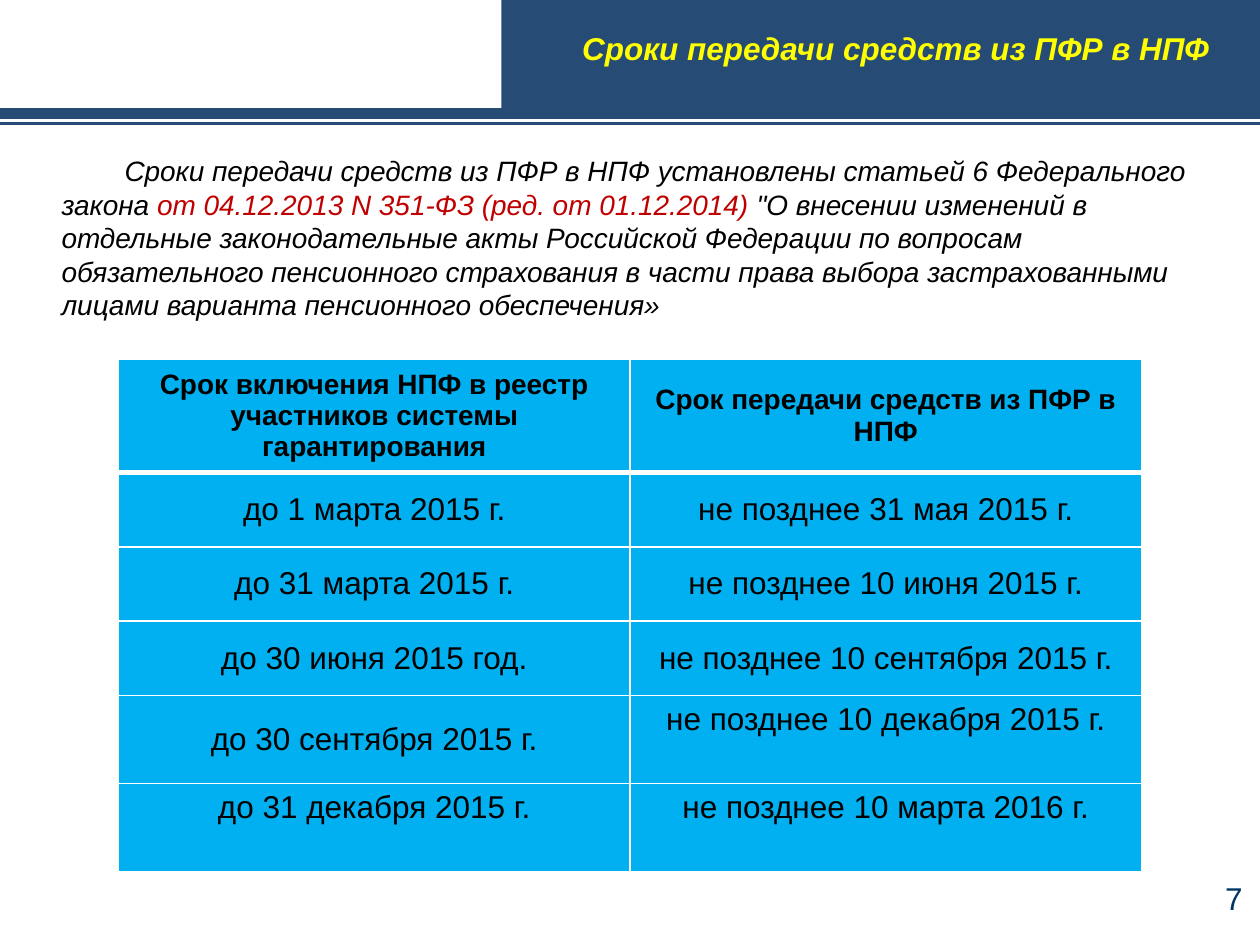
from lxml import etree
from pptx import Presentation
from pptx.dml.color import RGBColor
from pptx.enum.shapes import MSO_CONNECTOR, MSO_SHAPE
from pptx.enum.text import MSO_ANCHOR, PP_ALIGN
from pptx.oxml.ns import qn
from pptx.util import Inches, Pt

LEFT, CENTER, RIGHT = PP_ALIGN.LEFT, PP_ALIGN.CENTER, PP_ALIGN.RIGHT
TOP, MIDDLE = MSO_ANCHOR.TOP, MSO_ANCHOR.MIDDLE
RECT, STRAIGHT = MSO_SHAPE.RECTANGLE, MSO_CONNECTOR.STRAIGHT

NAVY, SKY, WHITE, BLACK = "264B75", "00B0F0", "FFFFFF", "000000"

TITLE = "Сроки передачи средств из ПФР в НПФ"
INTRO = [
    ("Сроки передачи средств из ПФР в НПФ установлены статьей 6 "
     "Федерального закона ", BLACK),
    ("от 04.12.2013 N 351-ФЗ (ред. от 01.12.2014) ", "C00000"),
    ("\"О внесении изменений в отдельные законодательные акты Российской "
     "Федерации по вопросам обязательного пенсионного страхования в части "
     "права выбора застрахованными лицами варианта пенсионного "
     "обеспечения»", BLACK),
]
# Row height, then text and anchor of both cells
TERMS = [
    (0.89, ("Срок включения НПФ в реестр участников системы гарантирования",
            MIDDLE), ("Срок передачи средств из ПФР в НПФ", MIDDLE)),
    (0.59, ("до 1 марта 2015 г.", MIDDLE),
     ("не позднее 31 мая 2015 г.", MIDDLE)),
    (0.59, ("до 31 марта 2015 г.", MIDDLE),
     ("не позднее 10 июня 2015 г.", MIDDLE)),
    (0.59, ("до 30 июня 2015 год.", MIDDLE),
     ("не позднее 10 сентября 2015 г.", MIDDLE)),
    (0.7, ("до 30 сентября 2015 г.", MIDDLE),
     ("не позднее 10 декабря 2015 г.", TOP)),
    (0.7, ("до 31 декабря 2015 г.", TOP),
     ("не позднее 10 марта 2016 г.", TOP)),
]


def color(code):
    return RGBColor.from_string(code)


def add_run(para, text, size, code, bold=False, italic=False):
    run = para.add_run()
    run.text = text
    font = run.font
    font.name, font.size = "Arial", Pt(size)
    font.bold, font.italic = bold, italic
    font.color.rgb = color(code)


def add_box(slide, x, y, w, h, align, side=0.1):
    """Add a wrapping text box and return its frame's first paragraph."""
    box = slide.shapes.add_textbox(Inches(x), Inches(y), Inches(w), Inches(h))
    frame = box.text_frame
    frame.word_wrap = True
    frame.margin_left = frame.margin_right = Inches(side)
    para = frame.paragraphs[0]
    para.alignment = align
    return para


def add_rule(slide, y, width):
    line = slide.shapes.add_connector(
        STRAIGHT, Inches(0), Inches(y), Inches(10), Inches(y))
    line.line.color.rgb = color(NAVY)
    line.line.width = Pt(width)
    etree.SubElement(line._element.spPr, qn("a:effectLst"))


def add_band(slide):
    band = slide.shapes.add_shape(
        RECT, Inches(3.98), Inches(0), Inches(6.02), Inches(0.91))
    band.shadow.inherit = False
    band.fill.solid()
    band.fill.fore_color.rgb = color(NAVY)
    band.line.fill.background()


def set_edge(cell, side, width):
    edge = etree.SubElement(cell._tc.get_or_add_tcPr(), qn("a:ln" + side),
                            w=str(Pt(width)))
    fill = etree.SubElement(edge, qn("a:solidFill"))
    etree.SubElement(fill, qn("a:srgbClr"), val=WHITE)


def fill_cell(cell, text, anchor, row):
    cell.vertical_anchor = anchor
    widths = {"L": 1, "R": 1, "T": 3 if row == 1 else 1,
              "B": 3 if row == 0 else 1}
    for side, width in widths.items():
        set_edge(cell, side, width)
    cell.fill.solid()
    cell.fill.fore_color.rgb = color(SKY)
    para = cell.text_frame.paragraphs[0]
    para.alignment = CENTER
    add_run(para, text, 18 if row else 16, BLACK, bold=row == 0)


def add_terms(slide):
    height = sum(term[0] for term in TERMS)
    table = slide.shapes.add_table(
        len(TERMS), 2, Inches(0.94), Inches(2.85),
        Inches(8.12), Inches(height)).table
    for row, (tall, *cells) in enumerate(TERMS):
        table.rows[row].height = Inches(tall)
        for col, (text, anchor) in enumerate(cells):
            fill_cell(table.cell(row, col), text, anchor, row)


def main():
    deck = Presentation()
    deck.slide_width, deck.slide_height = Inches(10), Inches(7.5)
    slide = deck.slides.add_slide(deck.slide_layouts[6])

    add_band(slide)
    add_rule(slide, 0.9, 6)
    add_rule(slide, 0.98, 2.25)
    add_run(add_box(slide, 9.21, 6.93, 0.75, 0.52, RIGHT), "7", 18, "003366")
    add_run(add_box(slide, 4.22, 0.18, 5.78, 0.4, CENTER, 0),
            TITLE, 18, "FFFF00", bold=True, italic=True)
    add_terms(slide)

    intro = add_box(slide, 0.39, 1.17, 9.3, 1.45, LEFT)
    intro._p.get_or_add_pPr().set("indent", str(Inches(0.5)))
    for text, code in INTRO:
        add_run(intro, text, 16, code, italic=True)

    deck.save("out.pptx")


if __name__ == "__main__":
    main()
